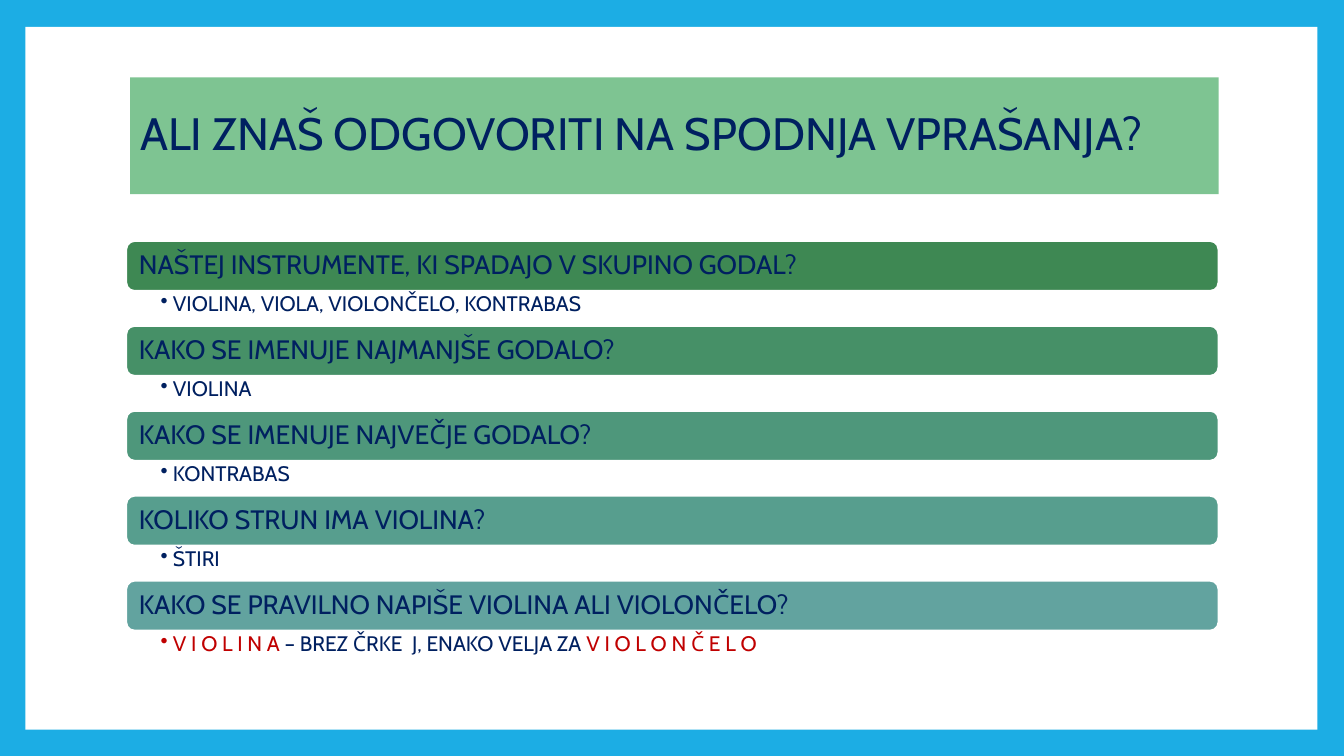
from dataclasses import dataclass

from lxml.etree import SubElement
from pptx import Presentation
from pptx.dml.color import RGBColor
from pptx.enum.shapes import MSO_SHAPE
from pptx.enum.text import MSO_ANCHOR, MSO_AUTO_SIZE, PP_ALIGN
from pptx.oxml.ns import qn
from pptx.util import Cm, Pt


@dataclass(frozen=True)
class Theme:
    font: str = "Cabin"
    frame: str = "1CADE4"
    paper: str = "FFFFFF"
    title_fill: str = "7EC492"
    ink: str = "002060"
    accent: str = "C00000"
    bars: tuple = ("3E8853", "469067", "4E977B", "579E8E", "62A39F")
    title_size: float = 32.4
    question_size: float = 19
    answer_size: float = 15


THEME = Theme()
TITLE = "ALI ZNAŠ ODGOVORITI NA SPODNJA VPRAŠANJA?"

# Each question with the runs of its answer
QUIZ = [
    ("NAŠTEJ INSTRUMENTE, KI SPADAJO V SKUPINO GODAL?",
     [("VIOLINA, VIOLA, VIOLONČELO, KONTRABAS", THEME.ink)]),
    ("KAKO SE IMENUJE NAJMANJŠE GODALO?", [("VIOLINA", THEME.ink)]),
    ("KAKO SE IMENUJE NAJVEČJE GODALO?", [("KONTRABAS", THEME.ink)]),
    ("KOLIKO STRUN IMA VIOLINA?", [("ŠTIRI", THEME.ink)]),
    ("KAKO SE PRAVILNO NAPIŠE VIOLINA ALI VIOLONČELO?",
     [("V I O L I N A ", THEME.accent),
      ("– BREZ ČRKE  J, ENAKO VELJA ZA ", THEME.ink),
      ("V I O L O N Č E L O", THEME.accent)]),
]


def paint(shape, color):
    shape.fill.solid()
    shape.fill.fore_color.rgb = RGBColor.from_string(color)


def write(shape, runs, size, anchor, margins):
    """Fill a shape with one left-aligned paragraph; margins run left, top, right, bottom."""
    frame = shape.text_frame
    frame.word_wrap = True
    frame.auto_size = MSO_AUTO_SIZE.NONE
    frame.vertical_anchor = anchor
    (frame.margin_left, frame.margin_top,
     frame.margin_right, frame.margin_bottom) = (Cm(margin) for margin in margins)
    paragraph = frame.paragraphs[0]
    paragraph.alignment = PP_ALIGN.LEFT
    paragraph.line_spacing = 0.9
    for text, color in runs:
        run = paragraph.add_run()
        run.text = text
        run.font.name = THEME.font
        run.font.size = Pt(size)
        run.font.color.rgb = RGBColor.from_string(color)
    return paragraph


def add_bullet(paragraph, indent):
    properties = paragraph._p.get_or_add_pPr()
    properties.set("marL", str(Cm(indent)))
    properties.set("indent", str(-Cm(indent)))
    SubElement(properties, qn("a:buChar"), char="•")


def add_block(slide, preset, box, color):
    shape = slide.shapes.add_shape(preset, *(Cm(length) for length in box))
    shape.shadow.inherit = False
    paint(shape, color)
    shape.line.fill.background()
    return shape


def add_background(slide, box):
    background = slide.background.fill
    background.solid()
    background.fore_color.rgb = RGBColor.from_string(THEME.frame)
    paper = add_block(slide, MSO_SHAPE.RECTANGLE, box, THEME.paper)
    # The paper lies behind the title
    slide.shapes._spTree.insert(2, paper._element)


def add_title(slide, box):
    title = slide.shapes.title
    title.left, title.top, title.width, title.height = (Cm(length) for length in box)
    paint(title, THEME.title_fill)
    write(title, [(TITLE, THEME.ink)], THEME.title_size,
          MSO_ANCHOR.MIDDLE, (0.25, 0.13, 0.25, 0.13))


def add_quiz(slide, box):
    left, top, width, height = box
    pitch = height / len(QUIZ)
    bar_height = 0.59 * pitch
    for index, ((question, answer), color) in enumerate(zip(QUIZ, THEME.bars)):
        bar_top = top + index * pitch
        # Question bar
        bar = add_block(slide, MSO_SHAPE.ROUNDED_RECTANGLE,
                        (left, bar_top, width, bar_height), color)
        bar.line.color.rgb = RGBColor.from_string(THEME.paper)
        bar.line.width = Pt(1.5)
        write(bar, [(question, THEME.ink)], THEME.question_size,
              MSO_ANCHOR.MIDDLE, (0.26, 0.2, 0.26, 0.2))
        # Answer below the bar
        answer_box = slide.shapes.add_textbox(
            Cm(left), Cm(bar_top + bar_height), Cm(width), Cm(pitch - bar_height))
        paragraph = write(answer_box, answer, THEME.answer_size,
                          MSO_ANCHOR.TOP, (0.87, 0.07, 0.38, 0.07))
        add_bullet(paragraph, 0.31)


def main():
    presentation = Presentation()
    presentation.slide_width, presentation.slide_height = Cm(33.87), Cm(19.05)
    slide = presentation.slides.add_slide(presentation.slide_layouts.get_by_name("Title Only"))
    add_background(slide, (0.64, 0.68, 32.56, 17.71))
    add_title(slide, (3.28, 1.95, 27.43, 2.94))
    add_quiz(slide, (3.18, 6.07, 27.53, 10.7))
    presentation.save("out.pptx")


if __name__ == "__main__":
    main()
